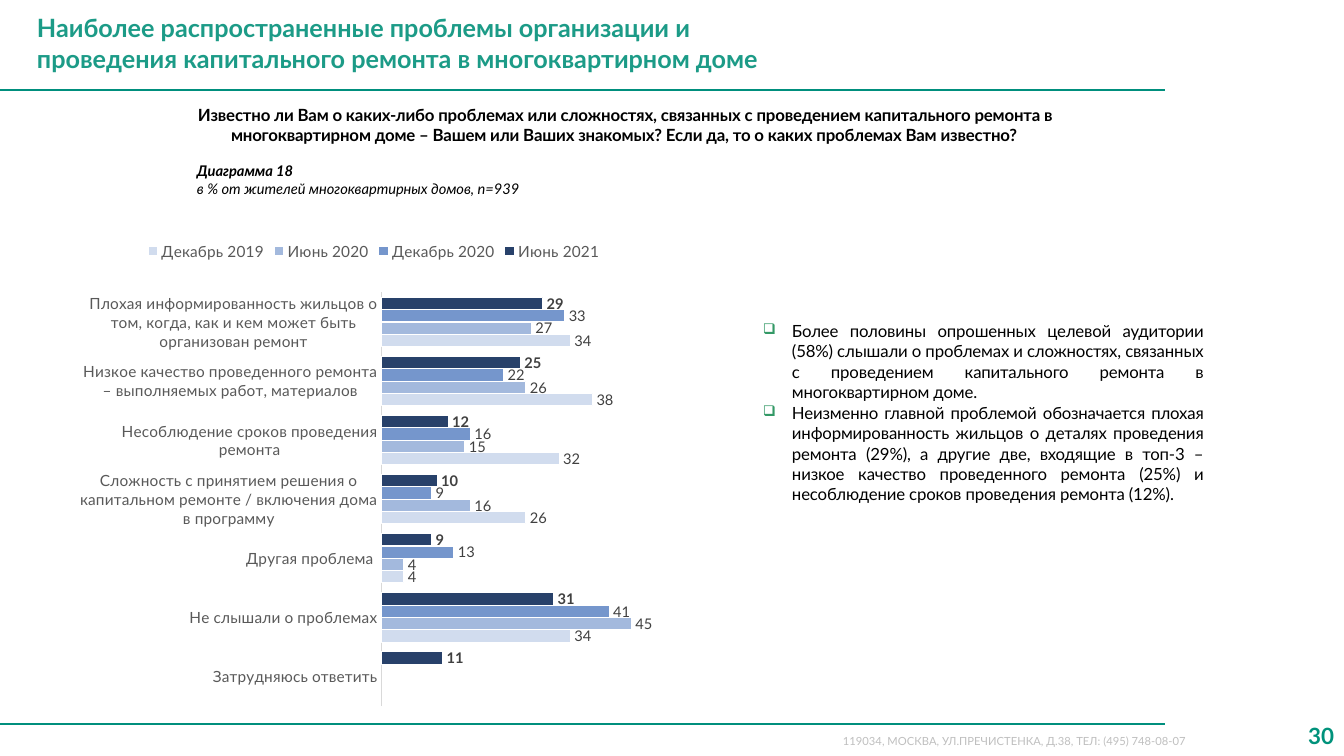
from lxml.etree import SubElement
from pptx import Presentation
from pptx.chart.data import CategoryChartData
from pptx.dml.color import RGBColor
from pptx.enum.chart import XL_CHART_TYPE, XL_LABEL_POSITION, XL_LEGEND_POSITION, XL_TICK_MARK
from pptx.enum.shapes import MSO_CONNECTOR
from pptx.enum.text import MSO_ANCHOR, MSO_AUTO_SIZE, PP_ALIGN
from pptx.oxml import parse_xml
from pptx.oxml.ns import nsdecls, qn
from pptx.util import Pt

SCALE = 914400 / 100.8
FONT = "Lato"
COLORS = {
    "rule": "008F7D", "number": "00927B", "title": "1C9B87", "bullet": "339966",
    "text": "000000", "address": "BFBFBF", "axis_text": "595959",
    "label": "404040", "axis_line": "D9D9D9", "white": "FFFFFF",
}
CATEGORIES = [
    "Плохая информированность жильцов о том, когда, как и кем может быть организован ремонт",
    "Низкое качество проведенного ремонта – выполняемых работ, материалов",
    "Несоблюдение сроков проведения ремонта",
    "Сложность с принятием решения о капитальном ремонте / включения дома в программу",
    "Другая проблема ",
    "Не слышали о проблемах",
    "Затрудняюсь ответить",
]
WAVES = [
    ("Июнь 2021 ", [29, 25, 12, 10, 9, 31, 11], "28416A"),
    ("Декабрь 2020", [33, 22, 16, 9, 13, 41, None], "7596CC"),
    ("Июнь 2020", [27, 26, 15, 16, 4, 45, None], "A3B9DD"),
    ("Декабрь 2019", [34, 38, 32, 26, 4, 34, None], "D1DCEE"),
]
FINDINGS = [
    "Более половины опрошенных целевой аудитории (58%) слышали о проблемах и сложностях, "
    "связанных с проведением капитального ремонта в многоквартирном доме.",
    "Неизменно главной проблемой обозначается плохая информированность жильцов о деталях "
    "проведения ремонта (29%), а другие две, входящие в топ-3 – низкое качество проведенного "
    "ремонта (25%) и несоблюдение сроков проведения ремонта (12%).",
]
QUESTION = (
    "Известно ли Вам о каких-либо проблемах или сложностях, связанных с проведением капитального "
    "ремонта в  многоквартирном доме – Вашем или Ваших знакомых? Если да, то о каких проблемах "
    "Вам известно?"
)


def px(*lengths):
    return [round(length * SCALE) for length in lengths]


def rgb(name):
    return RGBColor.from_string(COLORS[name])


def style_font(font, size, color, bold=False, italic=False):
    font.name = FONT
    font.size = Pt(size)
    font.color.rgb = rgb(color)
    font.bold = bold
    font.italic = italic


def add_bullet(properties):
    color = SubElement(properties, qn("a:buClr"))
    SubElement(color, qn("a:srgbClr"), val=COLORS["bullet"])
    SubElement(properties, qn("a:buSzPct"), val="88000")
    SubElement(properties, qn("a:buChar"), char="❑")


def add_text(frame, text, size, color="text", bold=False, italic=False, align=PP_ALIGN.LEFT,
             before=0, margin=0, indent=0, bullet=False, spacing=0):
    paragraph = frame.paragraphs[0]
    if paragraph.runs:
        paragraph = frame.add_paragraph()
    properties = paragraph._p.get_or_add_pPr()
    if margin:
        left, first = px(margin, indent)
        properties.set("marL", str(left))
        properties.set("indent", str(first))
    if bullet:
        add_bullet(properties)
    paragraph.alignment = align
    paragraph.space_before = Pt(before)
    run = paragraph.add_run()
    run.text = text
    style_font(run.font, size, color, bold, italic)
    if spacing:
        run._r.get_or_add_rPr().set("spc", str(spacing))


def set_frame(frame, inset_x, inset_y, anchor=MSO_ANCHOR.TOP):
    frame.word_wrap = True
    frame.auto_size = MSO_AUTO_SIZE.NONE
    frame.vertical_anchor = anchor
    frame.margin_left = frame.margin_right = px(inset_x)[0]
    frame.margin_top = frame.margin_bottom = px(inset_y)[0]
    return frame


def add_box(slide, left, top, width, height, inset_x=0, inset_y=1, anchor=MSO_ANCHOR.TOP):
    shape = slide.shapes.add_textbox(*px(left, top, width, height))
    return set_frame(shape.text_frame, inset_x, inset_y, anchor)


def add_rule(slide, top):
    rule = slide.shapes.add_connector(MSO_CONNECTOR.STRAIGHT, *px(0, top, 1165, top))
    rule.line.color.rgb = rgb("rule")
    rule.line.width = Pt(2)
    SubElement(rule._element.spPr, qn("a:effectLst"))


def add_title(slide, lines):
    title = slide.shapes.title
    title.left, title.top, title.width, title.height = px(27, 0, 1093, 86)
    frame = set_frame(title.text_frame, 10, 5, MSO_ANCHOR.MIDDLE)
    for line in lines:
        add_text(frame, line, 18, "title", bold=True, align=PP_ALIGN.JUSTIFY)


def set_plot_area(chart, **fractions):
    settings = {"layoutTarget": "inner", "xMode": "edge", "yMode": "edge", **fractions}
    values = "".join(f'<c:{name} val="{value}"/>' for name, value in settings.items())
    layout = parse_xml(
        f'<c:layout {nsdecls("c")}><c:manualLayout>{values}</c:manualLayout></c:layout>')
    plot_area = chart._chartSpace.chart.plotArea
    for previous in plot_area.findall(qn("c:layout")):
        plot_area.remove(previous)
    plot_area.insert(0, layout)


def style_series(series, color, bold):
    series.format.fill.solid()
    series.format.fill.fore_color.rgb = RGBColor.from_string(color)
    series.format.line.color.rgb = rgb("white")
    series.format.line.width = Pt(0.75)
    labels = series.data_labels
    labels.show_value = True
    labels.position = XL_LABEL_POSITION.OUTSIDE_END
    labels.number_format = "0"
    labels.number_format_is_linked = False
    style_font(labels.font, 10.5, "label", bold)


def add_problem_chart(slide):
    data = CategoryChartData(number_format="0")
    data.categories = CATEGORIES
    for name, values, _ in WAVES:
        data.add_series(name, values)
    chart = slide.shapes.add_chart(
        XL_CHART_TYPE.BAR_CLUSTERED, *px(80, 230, 591, 481), data).chart
    chart.has_title = False
    style_font(chart.font, 10, "text")
    chart.has_legend = True
    chart.legend.position = XL_LEGEND_POSITION.TOP
    chart.legend.include_in_layout = False
    style_font(chart.legend.font, 11, "axis_text")

    category_axis = chart.category_axis
    category_axis.reverse_order = True
    category_axis.major_tick_mark = XL_TICK_MARK.NONE
    category_axis.format.line.color.rgb = rgb("axis_line")
    category_axis.format.line.width = Pt(0.75)
    style_font(category_axis.tick_labels.font, 11, "axis_text")
    value_axis = chart.value_axis
    value_axis.minimum_scale = 0
    value_axis.maximum_scale = 50
    value_axis.has_major_gridlines = False
    value_axis.visible = False

    plot = chart.plots[0]
    plot.vary_by_categories = False
    plot.gap_width = 80
    plot.overlap = 0
    for index, (series, wave) in enumerate(zip(plot.series, WAVES)):
        style_series(series, wave[2], bold=index == 0)
    set_plot_area(chart, x=0.51, y=0.13, w=0.47, h=0.86)


def main():
    presentation = Presentation()
    presentation.slide_width, presentation.slide_height = px(1344, 756)
    slide = presentation.slides.add_slide(presentation.slide_layouts[5])

    add_title(slide, ["Наиболее распространенные проблемы организации и",
                      "проведения капитального ремонта в многоквартирном доме"])
    for top in (90, 724):
        add_rule(slide, top)

    address = add_box(slide, 833, 729, 387, 24, 10, 5)
    add_text(address, "119034, МОСКВА, УЛ.ПРЕЧИСТЕНКА, Д.38, ТЕЛ: (495) 748-08-07", 8, "address")
    number = add_box(slide, 1275, 716, 69, 40, 10, 5, MSO_ANCHOR.MIDDLE)
    add_text(number, "30", 16, "number", bold=True, align=PP_ALIGN.RIGHT)

    question = add_box(slide, 197, 104, 885, 115)
    add_text(question, QUESTION, 12, bold=True, margin=34, indent=-33, spacing=-10)
    add_text(question, "Диаграмма 18", 10.5, bold=True, italic=True, before=12)
    add_text(question, "в % от жителей многоквартирных домов, n=939", 10.5, italic=True)

    add_problem_chart(slide)

    findings = add_box(slide, 761, 320, 443, 186)
    for index, finding in enumerate(FINDINGS):
        add_text(findings, finding, 12, align=PP_ALIGN.JUSTIFY, before=min(index, 1),
                 margin=31, indent=-29, bullet=True, spacing=-10)
    presentation.save("out.pptx")


if __name__ == "__main__":
    main()
